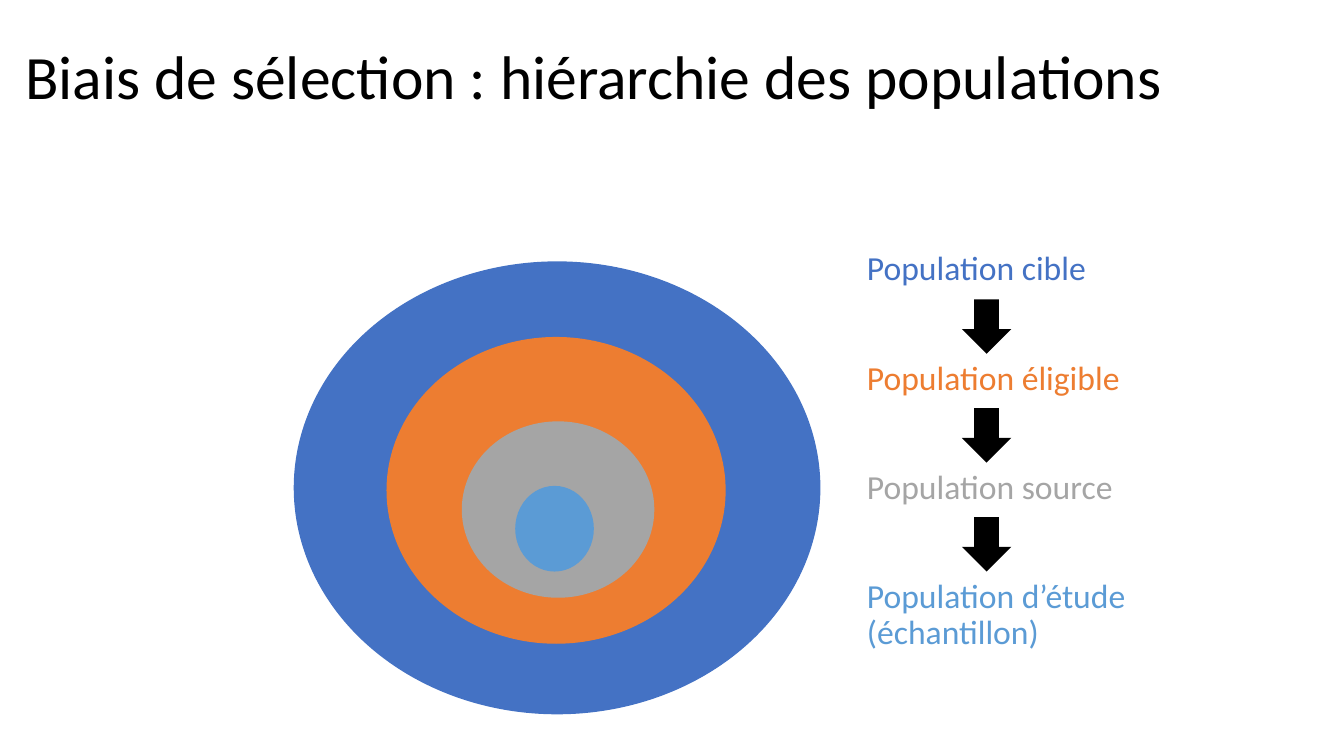
from pptx import Presentation
from pptx.dml.color import RGBColor
from pptx.enum import shapes, text
from pptx.util import Inches, Pt

BLACK = RGBColor(0x00, 0x00, 0x00)
BLUE = RGBColor(0x44, 0x72, 0xC4)
ORANGE = RGBColor(0xED, 0x7D, 0x31)
GRAY = RGBColor(0xA5, 0xA5, 0xA5)
SKY = RGBColor(0x5B, 0x9B, 0xD5)


def write(para, words, size=24, color=BLACK, before=0):
    para.alignment = text.PP_ALIGN.LEFT
    para.line_spacing = 0.9
    para.space_before = Pt(before)
    run = para.add_run()
    run.text = words
    run.font.name = "Calibri"
    run.font.size = Pt(size)
    run.font.color.rgb = color


def draw(slide, kind, box, color, edge=False):
    shape = slide.shapes.add_shape(kind, *map(Inches, box))
    shape.shadow.inherit = False
    shape.fill.solid()
    shape.fill.fore_color.rgb = color
    if edge:
        shape.line.color.rgb = color
        shape.line.width = Pt(1)
    else:
        shape.line.fill.background()


def add_title(slide, box, words):
    title = slide.shapes.title
    title.left, title.top, title.width, title.height = map(Inches, box)
    frame = title.text_frame
    frame.auto_size = text.MSO_AUTO_SIZE.NONE
    frame.vertical_anchor = text.MSO_ANCHOR.MIDDLE
    write(frame.paragraphs[0], words, size=44)


def add_rings(slide, left, top):
    """Nest the populations, each ring given as an offset and a size."""
    rings = [
        (0, 0, 5.21, 4.48, BLUE, True),
        (0.92, 0.75, 3.35, 3.03, ORANGE, True),
        (1.66, 1.58, 1.91, 1.75, GRAY, False),
        (2.19, 2.22, 0.78, 0.85, SKY, False),
    ]
    for x, y, width, height, color, edge in rings:
        draw(slide, shapes.MSO_SHAPE.OVAL,
             (left + x, top + y, width, height), color, edge)


def add_steps(slide, left, top, width, height):
    """List the populations, with an arrow in each gap between them."""
    steps = [
        ("Population cible", BLUE, 0),
        ("Population éligible", ORANGE, 52),
        ("Population source", GRAY, 52),
        ("Population d’étude", SKY, 52),
        ("(échantillon)", SKY, 0),
    ]
    box = slide.shapes.add_textbox(*map(Inches, (left, top, width, height)))
    frame = box.text_frame
    frame.word_wrap = False
    for i, (words, color, gap) in enumerate(steps):
        para = frame.add_paragraph() if i else frame.paragraphs[0]
        write(para, words, color=color, before=gap)
    for i in range(3):
        draw(slide, shapes.MSO_SHAPE.DOWN_ARROW,
             (left + 1.04, top + 0.52 + 1.08 * i, 0.49, 0.54), BLACK)


def main():
    deck = Presentation()
    deck.slide_width, deck.slide_height = Inches(13.33), Inches(7.5)
    slide = deck.slides.add_slide(deck.slide_layouts[5])
    add_title(slide, (0.15, 0.06, 11.5, 1.45),
              "Biais de sélection : hiérarchie des populations")
    add_rings(slide, 2.92, 2.6)
    add_steps(slide, 8.5, 2.45, 2.82, 4.11)
    deck.save("out.pptx")


if __name__ == "__main__":
    main()
